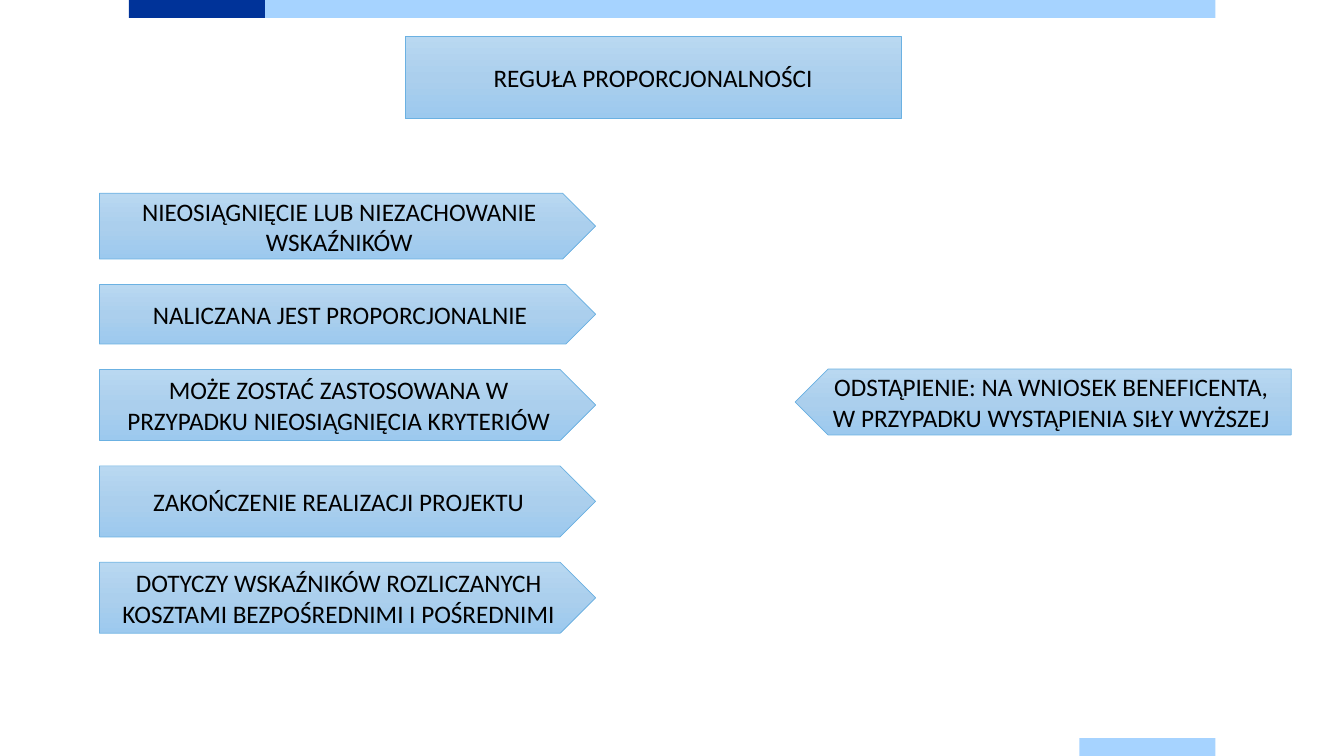
"""Build the slide on the proportionality rule."""
from copy import deepcopy

from pptx import Presentation
from pptx.dml.color import RGBColor
from pptx.enum.shapes import MSO_SHAPE
from pptx.enum.text import MSO_ANCHOR, MSO_AUTO_SIZE, PP_ALIGN
from pptx.oxml.ns import qn
from pptx.util import Cm, Pt

TITLE = "REGUŁA PROPORCJONALNOŚCI"
RULES = [
    ("NIEOSIĄGNIĘCIE LUB NIEZACHOWANIE WSKAŹNIKÓW", 1.66),
    ("NALICZANA JEST PROPORCJONALNIE", 1.5),
    ("MOŻE ZOSTAĆ ZASTOSOWANA W PRZYPADKU NIEOSIĄGNIĘCIA KRYTERIÓW", 1.79),
    ("ZAKOŃCZENIE REALIZACJI PROJEKTU", 1.79),
    ("DOTYCZY WSKAŹNIKÓW ROZLICZANYCH KOSZTAMI BEZPOŚREDNIMI I POŚREDNIMI", 1.79),
]
EXCEPTION = "ODSTĄPIENIE: NA WNIOSEK BENEFICENTA, W PRZYPADKU WYSTĄPIENIA SIŁY WYŻSZEJ"
BARS = [
    (3.25, 0, 3.43, "003399"),
    (6.68, 0, 23.95, "A6D3FF"),
    (27.2, 18.6, 3.43, "A6D3FF"),
]
GRADIENT = [(0, "B9D8F1"), (0.5, "ABCFED"), (1, "9CC9EE")]
BOX_WIDTH, BAR_HEIGHT = 12.5, 0.45
RULES_LEFT, RULES_TOP, RULES_GAP = 2.51, 4.87, 0.64


def color(code):
    return RGBColor.from_string(code)


def add_shape(page, kind, left, top, width, height):
    shape = page.shapes.add_shape(kind, Cm(left), Cm(top), Cm(width), Cm(height))
    shape.shadow.inherit = False
    return shape


def style_box(box, text):
    box.fill.gradient()
    box.fill.gradient_angle = 270
    stop_list = box.element.spPr.find(".//" + qn("a:gsLst"))
    stop_list.insert(1, deepcopy(stop_list[0]))
    for stop, (position, code) in zip(box.fill.gradient_stops, GRADIENT):
        stop.position = position
        stop.color.rgb = color(code)
    box.line.color.rgb = color("6BB1E2")
    box.line.width = Pt(0.5)
    frame = box.text_frame
    frame.word_wrap = True
    frame.auto_size = MSO_AUTO_SIZE.NONE
    frame.vertical_anchor = MSO_ANCHOR.MIDDLE
    para = frame.paragraphs[0]
    para.alignment = PP_ALIGN.CENTER
    span = para.add_run()
    span.text = text
    span.font.name = "Calibri"
    span.font.size = Pt(18)
    span.font.color.rgb = color("000000")


def add_arrow(page, text, left, top, height):
    arrow = add_shape(page, MSO_SHAPE.PENTAGON, left, top, BOX_WIDTH, height)
    style_box(arrow, text)
    return arrow


def main():
    deck = Presentation()
    deck.slide_width, deck.slide_height = Cm(33.87), Cm(19.05)
    page = deck.slides.add_slide(deck.slide_layouts[5])

    for left, top, width, code in BARS:
        bar = add_shape(page, MSO_SHAPE.RECTANGLE, left, top, width, BAR_HEIGHT)
        bar.fill.solid()
        bar.fill.fore_color.rgb = color(code)
        bar.line.fill.background()

    title = page.shapes.title
    title.left, title.top = Cm(10.21), Cm(0.92)
    title.width, title.height = Cm(BOX_WIDTH), Cm(2.07)
    style_box(title, TITLE)

    top = RULES_TOP
    for text, height in RULES:
        add_arrow(page, text, RULES_LEFT, top, height)
        top += height + RULES_GAP

    exception = add_arrow(page, EXCEPTION, 20.04, 9.3, 1.66)
    exception.element.spPr.xfrm.set("flipH", "1")
    deck.save("out.pptx")


if __name__ == "__main__":
    main()
